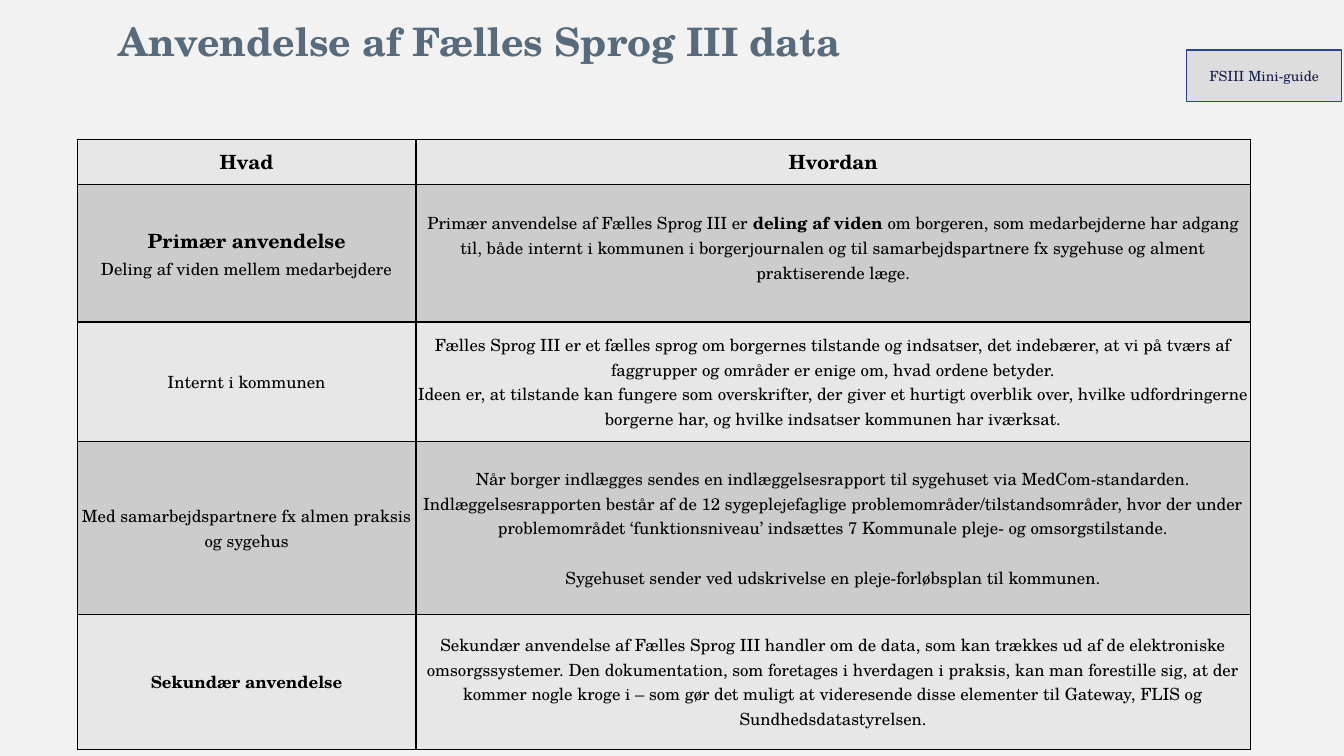
from dataclasses import dataclass

from lxml import etree
from pptx import Presentation
from pptx import util as u
from pptx.dml.color import RGBColor
from pptx.enum import shapes, text
from pptx.oxml import ns


@dataclass(frozen=True)
class Theme:
    font: str = "TeX Gyre Schola"
    page: str = "F2F2F2"
    title: str = "576B7C"
    navy: str = "141E4D"
    edge: str = "2A438F"
    badge: str = "DDDDDD"
    light: str = "E7E7E7"
    dark: str = "CCCCCC"
    ink: str = "000000"
    big: int = 28
    head: int = 14
    body: int = 12
    small: int = 10


T = Theme()
WIDE, HIGH = 13.33, 7.5
COLS = [25.2, 62.1]
ROWS = [5.95, 18.2, 15.8, 22.9, 17.8]
HEAD = {"size": T.head, "bold": True}
BOLD = {"bold": True}
GAP = {"gap": 17.6}

CELLS = [
    [[("Hvad", HEAD)], [("Hvordan", HEAD)]],
    [
        [("Primær anvendelse", HEAD), ("Deling af viden mellem medarbejdere", {})],
        [("Primær anvendelse af Fælles Sprog III er *deling af viden* om borgeren, som "
          "medarbejderne har adgang til, både internt i kommunen i borgerjournalen og til "
          "samarbejdspartnere fx sygehuse og alment praktiserende læge.", {})],
    ],
    [
        [("Internt i kommunen", {})],
        [("Fælles Sprog III er et fælles sprog om borgernes tilstande og indsatser, det "
          "indebærer, at vi på tværs af faggrupper og områder er enige om, hvad ordene "
          "betyder.", {}),
         ("Ideen er, at tilstande kan fungere som overskrifter, der giver et hurtigt overblik "
          "over, hvilke udfordringerne borgerne har, og hvilke indsatser kommunen har "
          "iværksat.", {})],
    ],
    [
        [("Med samarbejdspartnere fx almen praksis", {}), ("og sygehus", {})],
        [("Når borger indlægges sendes en indlæggelsesrapport til sygehuset via "
          "MedCom-standarden. Indlæggelsesrapporten består af de 12 sygeplejefaglige "
          "problemområder/tilstandsområder, hvor der under problemområdet ‘funktionsniveau’ "
          "indsættes 7 Kommunale pleje- og omsorgstilstande.", {}),
         ("Sygehuset sender ved udskrivelse en pleje-forløbsplan til kommunen.", GAP)],
    ],
    [
        [("Sekundær anvendelse", BOLD)],
        [("Sekundær anvendelse af Fælles Sprog III handler om de data, som kan trækkes ud af de "
          "elektroniske omsorgssystemer. Den dokumentation, som foretages i hverdagen i "
          "praksis, kan man forestille sig, at der kommer nogle kroge i – som gør det muligt "
          "at videresende disse elementer til Gateway, FLIS og Sundhedsdatastyrelsen.", {})],
    ],
]


def across(share):
    return u.Inches(WIDE * share / 100)


def down(share):
    return u.Inches(HIGH * share / 100)


def box(left, top, width, height):
    return across(left), down(top), across(width), down(height)


def paint(fill, color):
    fill.solid()
    fill.fore_color.rgb = RGBColor.from_string(color)


def write(para, words, size=T.body, color=T.ink, bold=False, align="CENTER", gap=0, line=None):
    para.alignment = getattr(text.PP_ALIGN, align)
    para.space_before = u.Pt(gap)
    para.line_spacing = line
    for spot, part in enumerate(words.split("*")):
        run = para.add_run()
        run.text = part
        font = run.font
        font.name, font.size = T.font, u.Pt(size)
        font.bold = bold or spot % 2 == 1
        font.color.rgb = RGBColor.from_string(color)


def title(slide, words):
    frame = slide.shapes.add_textbox(*box(8.85, 3.33, 85, 5.33)).text_frame
    frame.word_wrap = True
    frame.vertical_anchor = text.MSO_ANCHOR.BOTTOM
    frame.margin_left = frame.margin_right = frame.margin_top = frame.margin_bottom = 0
    write(frame.paragraphs[0], words, size=T.big, color=T.title, bold=True, align="LEFT", line=0.9)


def badge(slide, words):
    shape = slide.shapes.add_shape(shapes.MSO_SHAPE.RECTANGLE, *box(88.3, 6.6, 11.5, 6.8))
    shape.shadow.inherit = False
    paint(shape.fill, T.badge)
    paint(shape.line.fill, T.edge)
    shape.line.width = u.Pt(1)
    shape.text_frame.word_wrap = True
    shape.text_frame.vertical_anchor = text.MSO_ANCHOR.MIDDLE
    write(shape.text_frame.paragraphs[0], words, size=T.small, color=T.navy)


def border(cell):
    props = cell._tc.get_or_add_tcPr()
    for side in ("lnL", "lnR", "lnT", "lnB"):
        line = etree.SubElement(props, ns.qn(f"a:{side}"), w=str(u.Pt(1)))
        fill = etree.SubElement(line, ns.qn("a:solidFill"))
        etree.SubElement(fill, ns.qn("a:srgbClr"), val=T.ink)


def fill_cell(cell, paras, color):
    border(cell)
    paint(cell.fill, color)
    cell.vertical_anchor = text.MSO_ANCHOR.MIDDLE
    cell.margin_left = cell.margin_right = cell.margin_top = cell.margin_bottom = 0
    frame = cell.text_frame
    for spot, (words, style) in enumerate(paras):
        para = frame.add_paragraph() if spot else frame.paragraphs[0]
        write(para, words, **style)


def grid(slide):
    place = box(5.75, 18.45, sum(COLS), sum(ROWS))
    table = slide.shapes.add_table(len(ROWS), len(COLS), *place).table
    table.first_row = table.horz_banding = False
    for col, share in zip(table.columns, COLS):
        col.width = across(share)
    for r, share in enumerate(ROWS):
        table.rows[r].height = down(share)
        for c, paras in enumerate(CELLS[r]):
            fill_cell(table.cell(r, c), paras, T.dark if r % 2 else T.light)
    table.cell(1, 1).margin_bottom = down(1.6)


def main():
    deck = Presentation()
    deck.slide_width, deck.slide_height = across(100), down(100)
    slide = deck.slides.add_slide(deck.slide_layouts[6])
    paint(slide.background.fill, T.page)
    title(slide, "Anvendelse af Fælles Sprog III data")
    badge(slide, "FSIII Mini-guide")
    grid(slide)
    deck.save("out.pptx")


if __name__ == "__main__":
    main()
